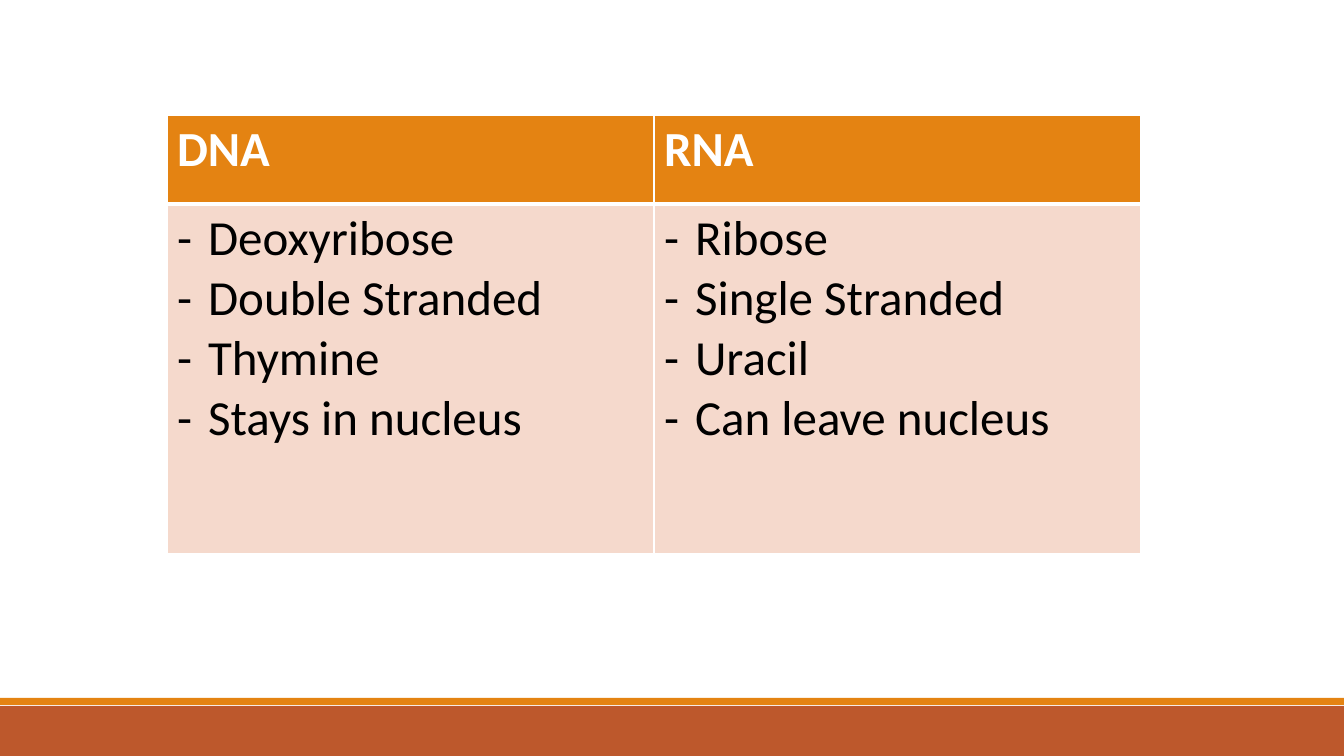
from lxml import etree
from pptx import Presentation
from pptx import util as u
from pptx.dml.color import RGBColor
from pptx.enum import shapes
from pptx.oxml import ns

PX_PER_INCH = 100.8
ORANGE, RUST, PINK = "E48312", "BD582C", "F5D9CC"
WHITE, BLACK = "FFFFFF", "000000"


def px(length):
    return u.Inches(length / PX_PER_INCH)


def colour(value):
    return RGBColor.from_string(value)


def add_text(para, words, font="Calibri", size=35, ink=BLACK, bold=False, bullet=None, indent=31):
    span = para.add_run()
    span.text = words
    span.font.name, span.font.size, span.font.bold = font, u.Pt(size), bold
    span.font.color.rgb = colour(ink)
    if bullet:
        props = para._p.get_or_add_pPr()
        props.set("marL", str(px(indent)))
        props.set("indent", str(-px(indent)))
        etree.SubElement(props, ns.qn("a:buFont"), typeface=font)
        etree.SubElement(props, ns.qn("a:buChar"), char=bullet)


class SlideBuilder:
    def __init__(self, deck):
        self.page = deck.slides.add_slide(deck.slide_layouts[6])

    def bar(self, left, top, width, height, fill):
        box = self.page.shapes.add_shape(
            shapes.MSO_SHAPE.RECTANGLE, px(left), px(top), px(width), px(height))
        box.shadow.inherit = False
        box.fill.solid()
        box.fill.fore_color.rgb = colour(fill)
        box.line.fill.background()

    def table(self, left, top, column_width, row_heights, columns):
        frame = self.page.shapes.add_table(
            len(row_heights), len(columns), px(left), px(top),
            px(column_width * len(columns)), px(sum(row_heights)))
        grid = frame.table
        for row, height in zip(grid.rows, row_heights):
            row.height = px(height)
        for index, (heading, facts) in enumerate(columns.items()):
            grid.columns[index].width = px(column_width)
            self.cell(grid.cell(0, index), [heading], ORANGE, {"B": 3}, ink=WHITE, bold=True)
            self.cell(grid.cell(1, index), facts, PINK, {"T": 3}, bullet="-")

    def cell(self, cell, lines, fill, heavy_edges, **style):
        # Borders come before the fill in the cell properties
        props = cell._tc.get_or_add_tcPr()
        for side in "LRTB":
            edge = etree.SubElement(
                props, ns.qn(f"a:ln{side}"), w=str(u.Pt(heavy_edges.get(side, 1))))
            solid = etree.SubElement(edge, ns.qn("a:solidFill"))
            etree.SubElement(solid, ns.qn("a:srgbClr"), val=WHITE)
        cell.fill.solid()
        cell.fill.fore_color.rgb = colour(fill)
        frame = cell.text_frame
        for index, words in enumerate(lines):
            para = frame.add_paragraph() if index else frame.paragraphs[0]
            add_text(para, words, **style)


def main():
    deck = Presentation()
    deck.slide_width, deck.slide_height = px(1344), px(756)
    slide = SlideBuilder(deck)

    # Footer bands
    slide.bar(0, 706, 1344, 50, RUST)
    slide.bar(0, 698, 1344, 7, ORANGE)

    # Comparison table
    slide.table(167, 115, 487, [89, 350], {
        "DNA": ["Deoxyribose", "Double Stranded", "Thymine", "Stays in nucleus"],
        "RNA": ["Ribose", "Single Stranded", "Uracil", "Can leave nucleus"],
    })

    deck.save("out.pptx")


if __name__ == "__main__":
    main()
